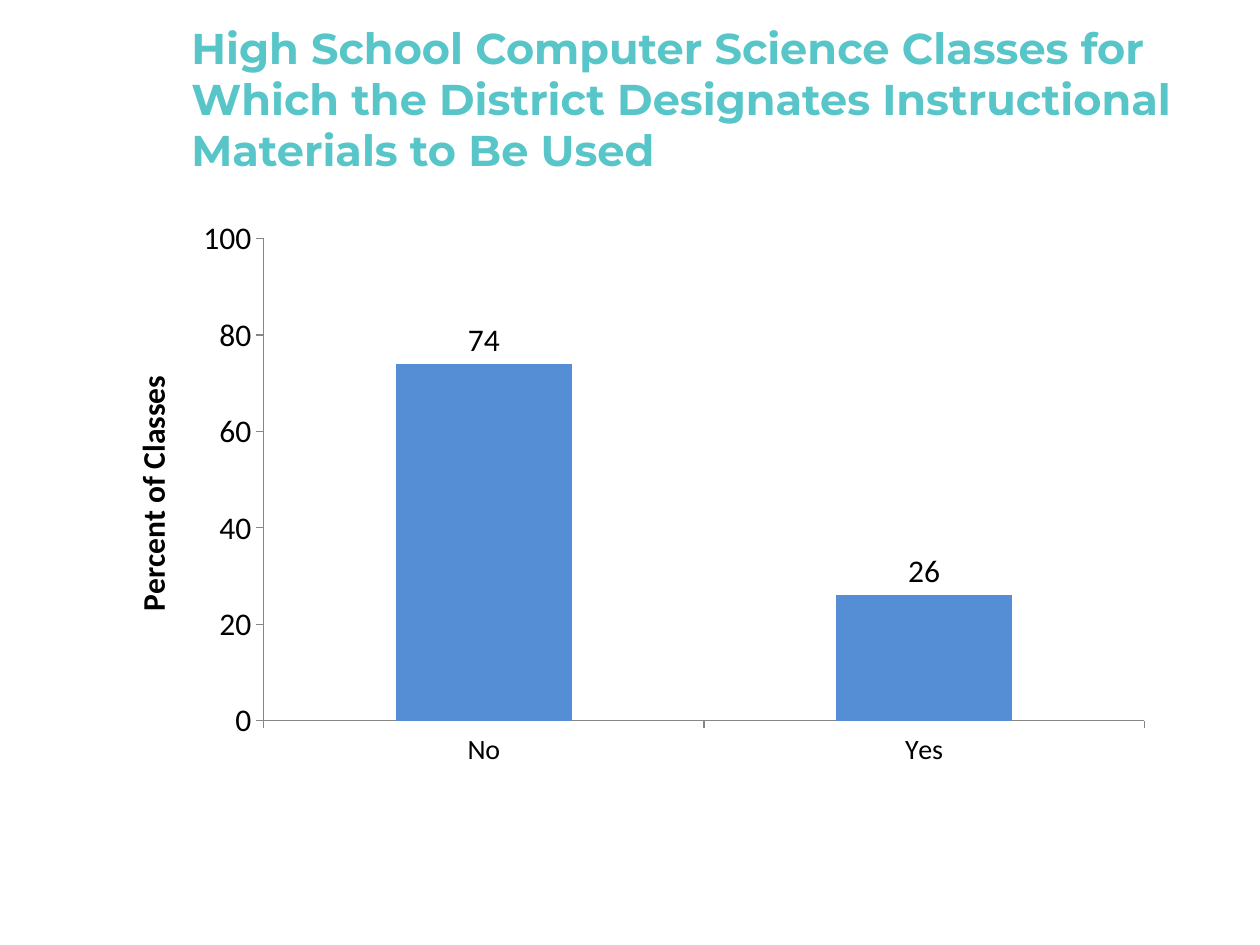
import pptx
import pptx.util
import pptx.chart.data
import pptx.dml.color
import pptx.enum.chart
import pptx.enum.text
import pptx.oxml
import pptx.oxml.ns

Inches = pptx.util.Inches
Pt = pptx.util.Pt
enums = pptx.enum.chart

TITLE = ("High School Computer Science Classes for Which the District "
         "Designates Instructional Materials to Be Used")
AXIS_TITLE = "Percent of Classes"
SERIES_NAME = "Series 1"
SHARES = {"No": 74, "Yes": 26}

TITLE_AREA = (1.42, 0.17, 8.08, 1.25)
CHART_AREA = (0.83, 1.67, 8.42, 4.5)
PLOT_LAYOUT = {"x": 0.15, "y": 0.05, "w": 0.83, "h": 0.85}

THEME = {
    "title": {"name": "Montserrat", "size": Pt(24.6), "bold": True, "color": "58C5C9"},
    "chart": {"name": "Calibri", "size": Pt(18), "bold": False, "color": "000000"},
    "category": {"name": "Calibri", "size": Pt(16), "bold": False, "color": "000000"},
    "axis_title": {"name": "Calibri", "size": Pt(18), "bold": True, "color": "000000"},
    "bar": "558ED5",
    "axis": "868686",
}


def rgb(value):
    return pptx.dml.color.RGBColor.from_string(value)


def apply(target, values):
    for name, value in values.items():
        setattr(target, name, value)


def style_font(font, values):
    apply(font, {name: value for name, value in values.items() if name != "color"})
    font.color.rgb = rgb(values["color"])


def add_title(page):
    box = page.shapes.add_textbox(*map(Inches, TITLE_AREA))
    apply(box.text_frame, {
        "word_wrap": True,
        "vertical_anchor": pptx.enum.text.MSO_ANCHOR.MIDDLE,
    })
    para = box.text_frame.paragraphs[0]
    para.line_spacing = 0.98
    span = para.add_run()
    span.text = TITLE
    style_font(span.font, THEME["title"])


def set_plot_layout(chart):
    plot_area = chart.plots[0]._element.getparent()
    for layout in plot_area.findall(pptx.oxml.ns.qn("c:layout")):
        plot_area.remove(layout)
    settings = {"layoutTarget": "inner", "xMode": "edge", "yMode": "edge", **PLOT_LAYOUT}
    children = "".join(f'<c:{name} val="{value}"/>' for name, value in settings.items())
    namespace = pptx.oxml.ns.nsdecls("c")
    plot_area.insert(0, pptx.oxml.parse_xml(
        f"<c:layout {namespace}><c:manualLayout>{children}</c:manualLayout></c:layout>"))


def add_share_chart(page):
    data = pptx.chart.data.CategoryChartData()
    data.categories = list(SHARES)
    data.add_series(SERIES_NAME, list(SHARES.values()))
    chart = page.shapes.add_chart(
        enums.XL_CHART_TYPE.COLUMN_CLUSTERED, *map(Inches, CHART_AREA), data).chart
    apply(chart, {"has_legend": False, "has_title": False})
    style_font(chart.font, THEME["chart"])

    plot = chart.plots[0]
    apply(plot, {"gap_width": 150, "vary_by_categories": False, "has_data_labels": True})
    apply(plot.data_labels, {
        "show_value": True,
        "position": enums.XL_LABEL_POSITION.OUTSIDE_END,
    })
    style_font(plot.data_labels.font, THEME["chart"])
    fill = plot.series[0].format.fill
    fill.solid()
    fill.fore_color.rgb = rgb(THEME["bar"])

    for axis, font in ((chart.category_axis, "category"), (chart.value_axis, "chart")):
        apply(axis, {
            "has_major_gridlines": False,
            "major_tick_mark": enums.XL_TICK_MARK.OUTSIDE,
            "minor_tick_mark": enums.XL_TICK_MARK.NONE,
        })
        style_font(axis.tick_labels.font, THEME[font])
        axis.format.line.color.rgb = rgb(THEME["axis"])
        axis.format.line.width = Pt(0.75)

    apply(chart.value_axis, {"minimum_scale": 0, "maximum_scale": 100, "major_unit": 20})
    para = chart.value_axis.axis_title.text_frame.paragraphs[0]
    span = para.add_run()
    span.text = AXIS_TITLE
    style_font(span.font, THEME["axis_title"])
    set_plot_layout(chart)


def main():
    deck = pptx.Presentation()
    apply(deck, {"slide_width": Inches(10), "slide_height": Inches(7.5)})
    page = deck.slides.add_slide(deck.slide_layouts[6])
    add_share_chart(page)
    add_title(page)
    deck.save("out.pptx")


if __name__ == "__main__":
    main()
